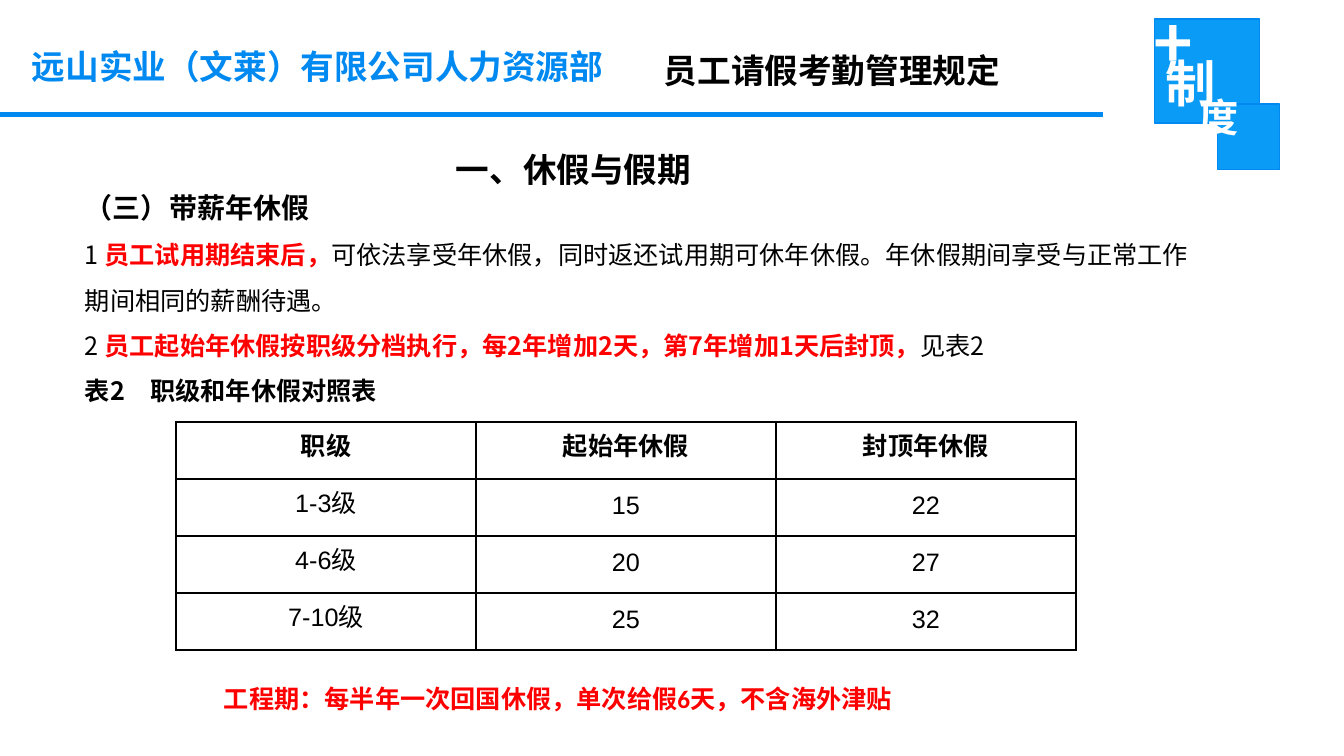
import pptx
import pptx.dml.color
import pptx.enum.shapes
import pptx.enum.text
import pptx.oxml
import pptx.oxml.ns
import pptx.util

EMU_PER_PX = 914400 / 100.8
CJK_FONT = "Noto Sans CJK SC"
BLUE, SQUARE_BLUE = "0089F1", "099BF5"
BLACK, WHITE, RED = "000000", "FFFFFF", "FF0000"

LEAVE_DAYS = [
    ["职级", "起始年休假", "封顶年休假"],
    ["1-3级", "15", "22"],
    ["4-6级", "20", "27"],
    ["7-10级", "25", "32"],
]


def px(length):
    return pptx.util.Emu(round(length * EMU_PER_PX))


def color(hex_code):
    return pptx.dml.color.RGBColor.from_string(hex_code)


class SlideBuilder:
    def __init__(self, presentation):
        self.slide = presentation.slides.add_slide(presentation.slide_layouts[6])

    def style_run(self, run, size, hex_code=BLACK, bold=False, font=CJK_FONT):
        run.font.size = pptx.util.Pt(size)
        run.font.bold = bold
        run.font.name = font
        run.font.color.rgb = color(hex_code)
        east_asian = pptx.oxml.ns.qn("a:ea")
        properties = run.font._element
        pptx.oxml.ns.qn("a:latin")
        latin = properties.find(pptx.oxml.ns.qn("a:latin"))
        latin.addnext(properties.makeelement(east_asian, {"typeface": CJK_FONT}))

    def rectangle(self, left, top, width, height, fill):
        shape = self.slide.shapes.add_shape(
            pptx.enum.shapes.MSO_SHAPE.RECTANGLE,
            px(left), px(top), px(width), px(height))
        shape.shadow.inherit = False
        shape.fill.solid()
        shape.fill.fore_color.rgb = color(fill)
        shape.line.color.rgb = color(BLUE)
        shape.line.width = pptx.util.Pt(0.75)

    def text(self, left, top, width, height, paragraphs):
        """Each paragraph is (line spacing, left indent, runs); a run is (text, style)."""
        box = self.slide.shapes.add_textbox(px(left), px(top), px(width), px(height))
        frame = box.text_frame
        frame.word_wrap = True
        for index, (spacing, indent, runs) in enumerate(paragraphs):
            paragraph = frame.add_paragraph() if index else frame.paragraphs[0]
            paragraph.line_spacing = spacing
            if indent:
                paragraph._p.get_or_add_pPr().set("marL", str(px(indent)))
            for content, style in runs:
                run = paragraph.add_run()
                run.text = content
                self.style_run(run, **style)

    def line_of_text(self, left, top, width, height, content, **style):
        self.text(left, top, width, height, [(1.0, 0, [(content, style)])])

    def table(self, left, top, column_width, row_height, rows):
        row_count, column_count = len(rows), len(rows[0])
        table = self.slide.shapes.add_table(
            row_count, column_count, px(left), px(top),
            px(column_width * column_count), px(row_height * row_count)).table
        table.first_row = table.horz_banding = False
        for column in table.columns:
            column.width = px(column_width)
        for row_index, values in enumerate(rows):
            table.rows[row_index].height = px(row_height)
            for column_index, value in enumerate(values):
                self.fill_cell(table.cell(row_index, column_index), value, row_index == 0)

    def fill_cell(self, cell, value, bold):
        cell.margin_left = cell.margin_right = px(7)
        cell.margin_top = cell.margin_bottom = 0
        cell.vertical_anchor = pptx.enum.text.MSO_ANCHOR.MIDDLE
        paragraph = cell.text_frame.paragraphs[0]
        paragraph.text = value
        paragraph.alignment = pptx.enum.text.PP_ALIGN.CENTER
        paragraph.line_spacing = pptx.util.Pt(18)
        self.style_run(paragraph.runs[0], 18, bold=bold, font="Arial")
        properties = cell._tc.get_or_add_tcPr()
        for side in ("lnL", "lnR", "lnT", "lnB"):
            properties.append(pptx.oxml.parse_xml(
                f'<a:{side} {pptx.oxml.ns.nsdecls("a")} w="12700"><a:solidFill>'
                f'<a:srgbClr val="{BLACK}"/></a:solidFill></a:{side}>'))
        cell.fill.solid()
        cell.fill.fore_color.rgb = color(WHITE)


def main():
    presentation = pptx.Presentation()
    presentation.slide_width, presentation.slide_height = px(1344), px(756)
    builder = SlideBuilder(presentation)

    builder.rectangle(0, 113, 1103, 4, BLUE)
    builder.rectangle(1155, 19, 105, 104, SQUARE_BLUE)
    builder.rectangle(1218, 104, 62, 66, SQUARE_BLUE)
    emblem = {"hex_code": WHITE, "bold": True}
    builder.text(1144, 46, 157, 104, [
        (pptx.util.Pt(22), 0, [("+", {"size": 48, "font": "Noto Sans CJK JP", **emblem})]),
        (pptx.util.Pt(22), 12, [("制", {"size": 36, **emblem})]),
        (pptx.util.Pt(20), 46, [("度", {"size": 28, **emblem})]),
    ])

    heading = {"size": 24, "bold": True}
    builder.line_of_text(22, 41, 903, 50, "远山实业（文莱）有限公司人力资源部",
                         hex_code=BLUE, **heading)
    builder.line_of_text(446, 144, 423, 50, "一、休假与假期", **heading)
    builder.line_of_text(654, 45, 470, 50, "员工请假考勤管理规定", **heading)

    plain = {"size": 18}
    strong = {"size": 18, "bold": True}
    alert = {"size": 18, "bold": True, "hex_code": RED}
    builder.text(75, 169, 1124, 407, [
        (1.5, 0, [("（三）带薪年休假", {"size": 20, "bold": True})]),
        (1.5, 0, [
            ("1 ", plain),
            ("员工试用期结束后，", alert),
            ("可依法享受年休假，同时返还试用期可休年休假。"
             "年休假期间享受与正常工作期间相同的薪酬待遇。", plain)]),
        (1.5, 0, [
            ("2 ", plain),
            ("员工起始年休假按职级分档执行，每2年增加2天，第7年增加1天后封顶，", alert),
            ("见表2", plain)]),
        (1.5, 0, [("表2　职级和年休假对照表", strong)]),
    ])
    builder.table(176, 422, 300, 57, LEAVE_DAYS)
    builder.line_of_text(214, 678, 985, 40,
                         "工程期：每半年一次回国休假，单次给假6天，不含海外津贴",
                         font="Calibri", **alert)

    presentation.save("out.pptx")


if __name__ == "__main__":
    main()
